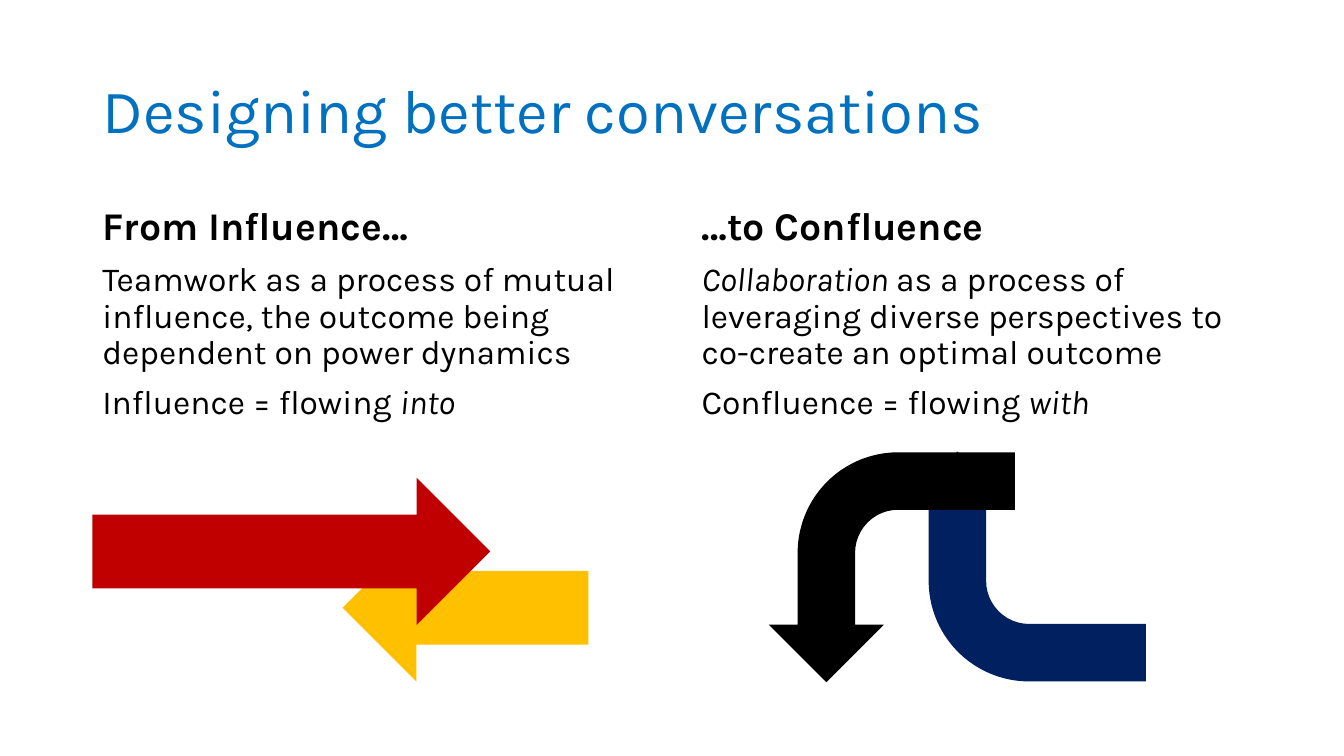
from pptx import Presentation
from pptx.dml.color import RGBColor as Rgb
from pptx.enum.shapes import MSO_SHAPE as Kind
from pptx.enum.text import MSO_ANCHOR as Anchor, MSO_AUTO_SIZE as Fit, PP_ALIGN as Align
from pptx.util import Pt

HUES = {"title": "0070C0", "text": "000000", "red": "C00000",
        "gold": "FFC000", "navy": "002060", "black": "000000"}
FONT = "Karla"
LEFT = [
    [("From Influence…", {"size": Pt(28), "bold": True})],
    [("Teamwork as a process of mutual influence, the outcome being "
      "dependent on power dynamics", {})],
    [("Influence = flowing ", {}), ("into", {"italic": True})],
]
RIGHT = [
    [("…to Confluence", {"size": Pt(28), "bold": True})],
    [("Collaboration", {"italic": True}),
     (" as a process of leveraging diverse perspectives to "
      "co-create an optimal outcome", {})],
    [("Confluence = flowing ", {}), ("with", {"italic": True})],
]


def style(item, form):
    for name, value in form.items():
        setattr(item, name, value)


def write(para, text, hue, form):
    run = para.add_run()
    run.text = text
    style(run.font, {"name": FONT, **form})
    run.font.color.rgb = Rgb.from_string(HUES[hue])


def title(slide, x, y, w, h):
    head = slide.shapes.title
    style(head, {"left": Pt(x), "top": Pt(y), "width": Pt(w), "height": Pt(h)})
    frame = head.text_frame
    style(frame, {"vertical_anchor": Anchor.MIDDLE, "word_wrap": True,
                  "auto_size": Fit.NONE})
    para = frame.paragraphs[0]
    style(para, {"alignment": Align.LEFT, "line_spacing": 0.9})
    write(para, "Designing better conversations", "title", {"size": Pt(44)})


def column(slide, x, y, w, h, paras):
    frame = slide.shapes.add_textbox(Pt(x), Pt(y), Pt(w), Pt(h)).text_frame
    style(frame, {"word_wrap": True, "auto_size": Fit.NONE})
    for num, runs in enumerate(paras):
        para = frame.add_paragraph() if num else frame.paragraphs[0]
        style(para, {"line_spacing": 0.9, "space_before": Pt(10)})
        for text, form in runs:
            write(para, text, "text", {"size": Pt(24), **form})


def arrow(slide, kind, x, y, w, h, hue, turn=0):
    shape = slide.shapes.add_shape(kind, Pt(x), Pt(y), Pt(w), Pt(h))
    shape.rotation = turn
    shape.shadow.inherit = False
    shape.fill.solid()
    shape.fill.fore_color.rgb = Rgb.from_string(HUES[hue])
    shape.line.fill.background()
    return shape


def merge(slide, x, y):
    w, h = 164.2, 175.7
    arrow(slide, Kind.BENT_ARROW, x + 93.6, y, w, h, "navy", 270)
    bend = arrow(slide, Kind.BENT_ARROW, x, y + 0.5, w, h, "black", 90)
    bend._element.spPr.xfrm.set("flipV", "1")


def clash(slide, x, y):
    h = 105.2
    arrow(slide, Kind.RIGHT_ARROW, x + 178.8, y + 40.2, 175.5, h, "gold", 180)
    arrow(slide, Kind.RIGHT_ARROW, x, y, 284.2, h, "red")


def main():
    deck = Presentation()
    style(deck, {"slide_width": Pt(960), "slide_height": Pt(540)})
    slide = deck.slides.add_slide(deck.slide_layouts[5])
    title(slide, 66, 28.8, 828, 104.4)
    for num, paras in enumerate((LEFT, RIGHT)):
        column(slide, 66 + num * 428, 144, 400, 170, paras)
    merge(slide, 555, 316.8)
    clash(slide, 66, 341.3)
    deck.save("out.pptx")


if __name__ == "__main__":
    main()
